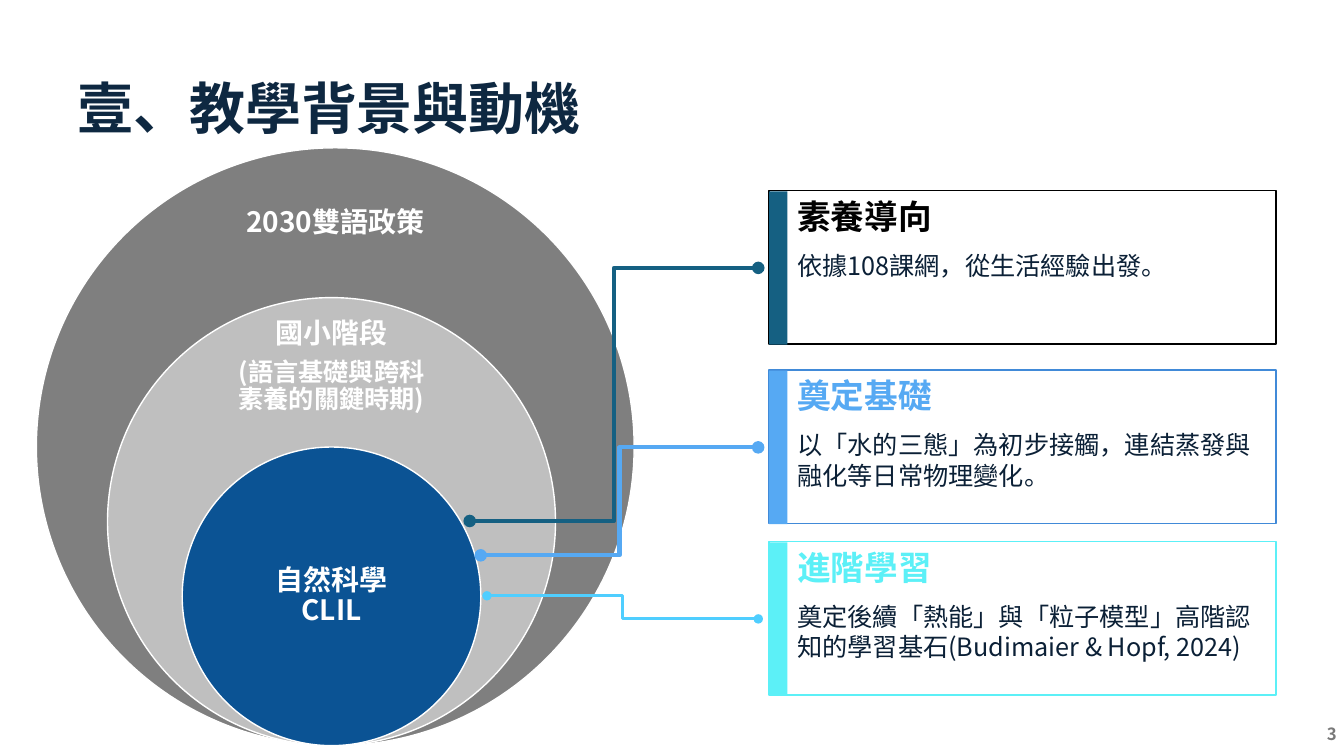
"""Build the slide on the background and motives of the CLIL teaching plan."""
from dataclasses import dataclass

from lxml.etree import SubElement
from pptx import Presentation
from pptx.dml.color import RGBColor
from pptx.enum.shapes import MSO_CONNECTOR, MSO_SHAPE
from pptx.enum.text import MSO_ANCHOR, MSO_AUTO_SIZE, PP_ALIGN
from pptx.oxml.ns import qn
from pptx.util import Pt


@dataclass(frozen=True)
class Theme:
    font: str = "Noto Sans CJK SC"
    title: str = "0E2841"
    body: str = "0B2036"
    number: str = "797979"
    white: str = "FFFFFF"
    black: str = "000000"
    policy: str = "7F7F7F"
    stage: str = "BFBFBF"
    science: str = "0B5394"
    teal: str = "156082"
    blue: str = "56A9F3"
    blue_edge: str = "418AD8"
    cyan: str = "5CF0F7"
    sky: str = "4FCEFF"
    title_size: float = 40
    heading_size: float = 24
    ring_size: float = 20
    body_size: float = 18
    number_size: float = 12


def write(frame, lines, *, font, color, bold=False, align=PP_ALIGN.LEFT,
          anchor=MSO_ANCHOR.TOP, spacing=1.0, gap=0, inset=(7.2, 3.6)):
    frame.word_wrap = True
    frame.auto_size = MSO_AUTO_SIZE.NONE
    frame.vertical_anchor = anchor
    frame.margin_left = frame.margin_right = Pt(inset[0])
    frame.margin_top = frame.margin_bottom = Pt(inset[1])
    for index, (words, size) in enumerate(lines):
        paragraph = frame.add_paragraph() if index else frame.paragraphs[0]
        paragraph.text = words
        paragraph.alignment = align
        paragraph.line_spacing = spacing
        paragraph.space_before = Pt(gap if index else 0)
        for run in paragraph.runs:
            run.font.name = font
            run.font.size = Pt(size)
            run.font.bold = bold
            run.font.color.rgb = RGBColor.from_string(color)
            SubElement(run.font._element, qn("a:ea"), typeface=font)


class SlideBuilder:
    def __init__(self, slide, theme):
        self.slide = slide
        self.theme = theme

    def title(self, words, left, top, width, height):
        heading = self.slide.shapes.title
        heading.left, heading.top = Pt(left), Pt(top)
        heading.width, heading.height = Pt(width), Pt(height)
        write(heading.text_frame, [(words, self.theme.title_size)], font=self.theme.font,
              color=self.theme.title, bold=True, anchor=MSO_ANCHOR.MIDDLE, spacing=0.9)

    def text(self, lines, left, top, width, height, **style):
        box = self.slide.shapes.add_textbox(Pt(left), Pt(top), Pt(width), Pt(height))
        write(box.text_frame, lines, font=self.theme.font, **style)

    def shape(self, kind, left, top, width, height, fill=None, line=None):
        figure = self.slide.shapes.add_shape(kind, Pt(left), Pt(top), Pt(width), Pt(height))
        figure.shadow.inherit = False
        if fill:
            figure.fill.solid()
            figure.fill.fore_color.rgb = RGBColor.from_string(fill)
        else:
            figure.fill.background()
        if line:
            figure.line.color.rgb = RGBColor.from_string(line)
            figure.line.width = Pt(1)
        else:
            figure.line.fill.background()

    def ring(self, center, diameter, bottom, fill, lines, label_width, label_middle):
        self.shape(MSO_SHAPE.OVAL, center - diameter / 2, bottom - diameter,
                   diameter, diameter, fill, self.theme.white)
        label_height = 100
        self.text(lines, center - label_width / 2, label_middle - label_height / 2,
                  label_width, label_height, color=self.theme.white, bold=True,
                  align=PP_ALIGN.CENTER, anchor=MSO_ANCHOR.MIDDLE,
                  spacing=0.9, gap=7, inset=(0, 0))

    def card(self, top, heading, detail, accent, edge, heading_color):
        left, width, height, bar = 549.4, 362.2, 109.6, 13
        self.shape(MSO_SHAPE.RECTANGLE, left, top, width, height, line=edge)
        self.shape(MSO_SHAPE.RECTANGLE, left, top + 0.4, bar, height, accent)
        self.text([(heading, self.theme.heading_size)], left + bar, top, 112, 36,
                  color=heading_color, bold=True)
        self.text([(detail, self.theme.body_size)], left + bar, top + 38.9, 348.5, 70,
                  color=self.theme.body)

    def link(self, start, end, color, weight):
        bend = self.slide.shapes.add_connector(
            MSO_CONNECTOR.ELBOW, *(Pt(value) for value in (*start, *end)))
        bend.line.color.rgb = RGBColor.from_string(color)
        bend.line.width = Pt(weight)
        stroke = bend.line._get_or_add_ln()
        for tip in ("a:headEnd", "a:tailEnd"):
            SubElement(stroke, qn(tip), type="oval")
        SubElement(bend._element.spPr, qn("a:effectLst"))


def main():
    theme = Theme()
    deck = Presentation()
    deck.slide_width, deck.slide_height = Pt(960), Pt(540)
    page = SlideBuilder(deck.slides.add_slide(deck.slide_layouts[5]), theme)

    page.title("壹、教學背景與動機", 48, 37.4, 864, 84.2)
    page.text([("3", theme.number_size)], 882, 506.2, 79.9, 28.8, color=theme.number,
              bold=True, align=PP_ALIGN.RIGHT, anchor=MSO_ANCHOR.BOTTOM)

    rings = [
        (239.5, 427, theme.policy, [("2030雙語政策", theme.ring_size)], 137, 159.3),
        (236.8, 320, theme.stage, [("國小階段", theme.ring_size),
                                   ("(語言基礎與跨科素養的關鍵時期)", theme.body_size)],
         135.4, 262.1),
        (236.8, 213.3, theme.science, [("自然科學\nCLIL", theme.ring_size)], 137, 425.9),
    ]
    for center, diameter, fill, lines, label_width, label_middle in rings:
        page.ring(center, diameter, 532.6, fill, lines, label_width, label_middle)

    cards = [
        (136.3, "素養導向", "依據108課網，從生活經驗出發。",
         theme.teal, theme.black, theme.black),
        (264.4, "奠定基礎", "以「水的三態」為初步接觸，連結蒸發與融化等日常物理變化。",
         theme.blue, theme.blue_edge, theme.blue),
        (387, "進階學習", "奠定後續「熱能」與「粒子模型」高階認知的學習基石(Budimaier & Hopf, 2024)",
         theme.cyan, theme.cyan, theme.cyan),
    ]
    for card in cards:
        page.card(*card)

    links = [
        ((347.8, 425.6), 442.1, theme.sky, 2.25),
        ((343.4, 396.7), 319.6, theme.blue, 3),
        ((335.5, 372.2), 191.4, theme.teal, 3),
    ]
    for start, card_middle, color, weight in links:
        page.link(start, (541.6, card_middle), color, weight)

    deck.save("out.pptx")


if __name__ == "__main__":
    main()
